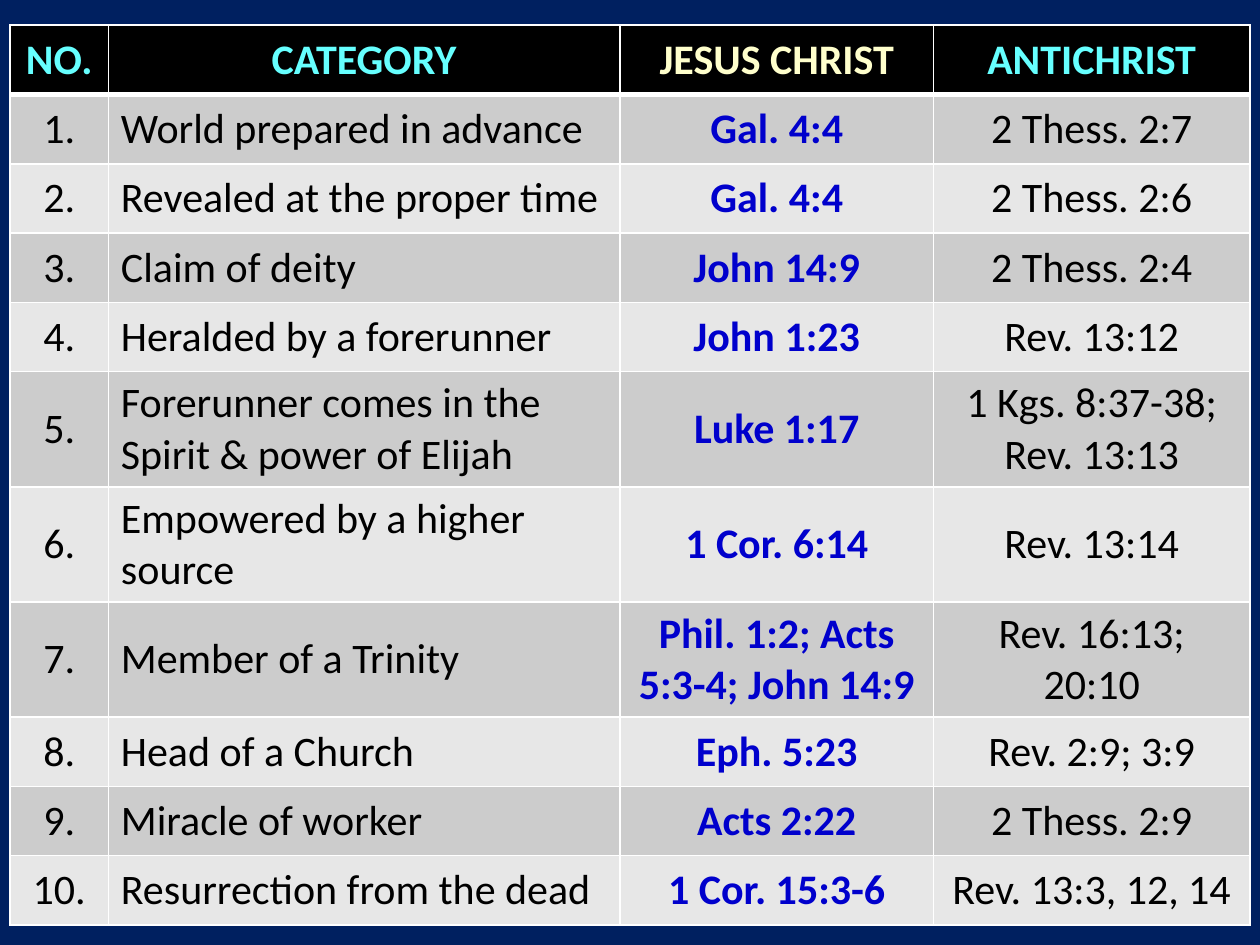
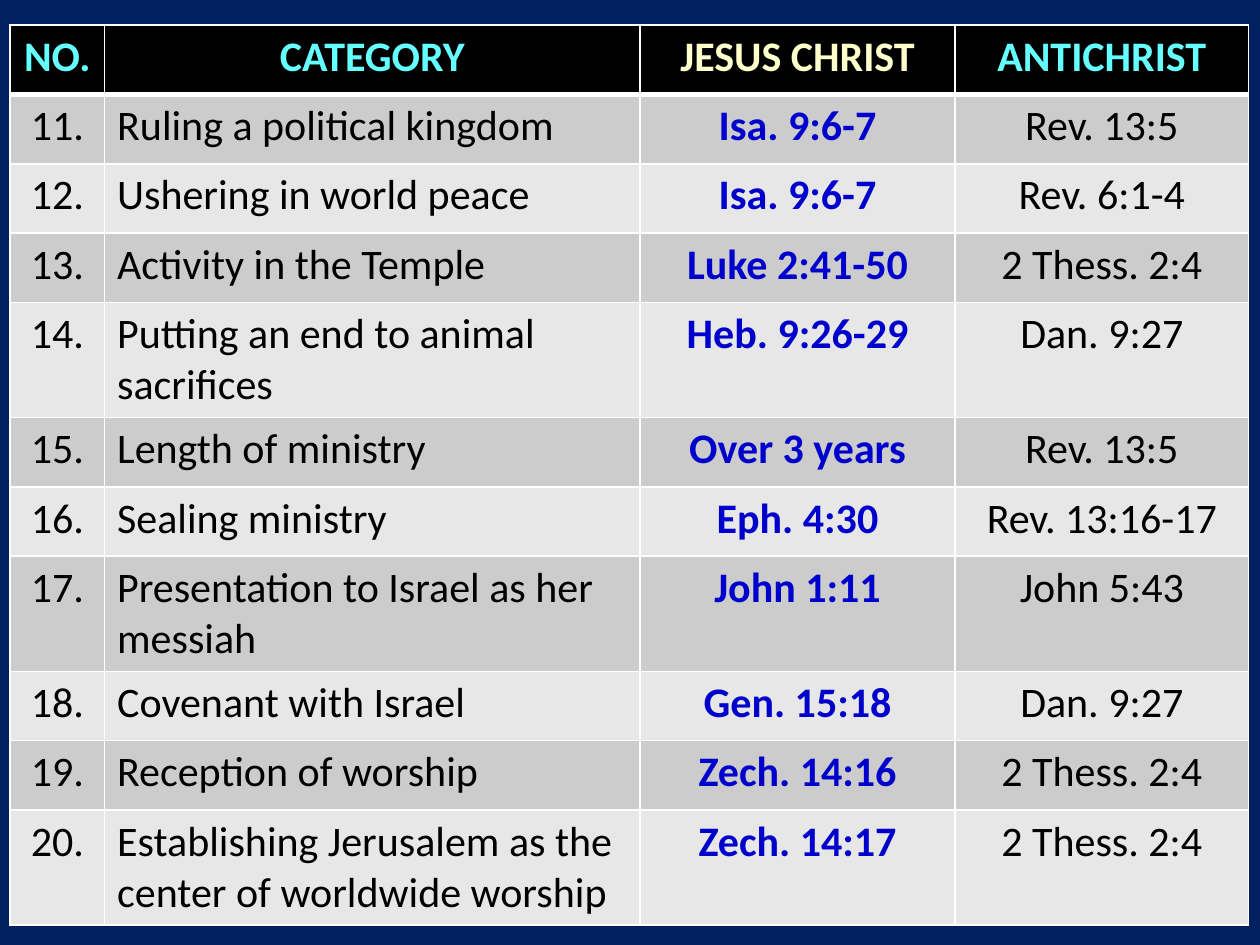
from dataclasses import dataclass

from lxml.etree import SubElement
from pptx import Presentation
from pptx.dml.color import RGBColor
from pptx.enum.text import MSO_ANCHOR as Anchor, PP_ALIGN as Align
from pptx.oxml.ns import qn
from pptx.util import Inches, Pt


@dataclass(frozen=True)
class Theme:
    """Colours, type and line sizes shared by the slides."""
    background: str = "002060"
    header_fill: str = "000000"
    bands: tuple = ("CCCCCC", "E7E7E7")
    header_text: tuple = ("66FFFF", "66FFFF", "FFFFCC", "66FFFF")
    body_text: tuple = ("000000", "000000", "0000CC", "000000")
    border: str = "FFFFFF"
    font: str = "Calibri"
    text_size: int = 24
    thin: int = 1
    thick: int = 3


THEME = Theme()
TABLE_BOX = (0.08, 0.2)
ROW_HEIGHT, TALL_ROW_HEIGHT = 0.55, 0.9
HEADERS = ("NO.", "CATEGORY", "JESUS CHRIST", "ANTICHRIST")
CATEGORY_COLUMN, CHRIST_COLUMN = 1, 2

FIRST_TEN = [
    ("World prepared in advance", "Gal. 4:4", "2 Thess. 2:7"),
    ("Revealed at the proper time", "Gal. 4:4", "2 Thess. 2:6"),
    ("Claim of deity", "John 14:9", "2 Thess. 2:4"),
    ("Heralded by a forerunner", "John 1:23", "Rev. 13:12"),
    ("Forerunner comes in the Spirit & power of Elijah", "Luke 1:17",
     "1 Kgs. 8:37-38; Rev. 13:13"),
    ("Empowered by a higher source", "1 Cor. 6:14", "Rev. 13:14"),
    ("Member of a Trinity", "Phil. 1:2; Acts 5:3-4; John 14:9",
     "Rev. 16:13; 20:10"),
    ("Head of a Church", "Eph. 5:23", "Rev. 2:9; 3:9"),
    ("Miracle of worker", "Acts 2:22", "2 Thess. 2:9"),
    ("Resurrection from the dead", "1 Cor. 15:3-6", "Rev. 13:3, 12, 14"),
]
SECOND_TEN = [
    ("Ruling a political kingdom", "Isa. 9:6-7", "Rev. 13:5"),
    ("Ushering in world peace", "Isa. 9:6-7", "Rev. 6:1-4"),
    ("Activity in the Temple", "Luke 2:41-50", "2 Thess. 2:4"),
    ("Putting an end to animal sacrifices", "Heb. 9:26-29", "Dan. 9:27"),
    ("Length of ministry", "Over 3 years", "Rev. 13:5"),
    ("Sealing ministry", "Eph. 4:30", "Rev. 13:16-17"),
    ("Presentation to Israel as her messiah", "John 1:11", "John 5:43"),
    ("Covenant with Israel", "Gen. 15:18", "Dan. 9:27"),
    ("Reception of worship", "Zech. 14:16", "2 Thess. 2:4"),
    ("Establishing Jerusalem as the center of worldwide worship",
     "Zech. 14:17", "2 Thess. 2:4"),
]


def set_borders(cell, top, bottom):
    """Draw the four cell borders, with the given top and bottom widths."""
    properties = cell._tc.get_or_add_tcPr()
    widths = {"lnL": THEME.thin, "lnR": THEME.thin, "lnT": top, "lnB": bottom}
    for side, width in widths.items():
        line = SubElement(properties, qn(f"a:{side}"), w=str(Pt(width)))
        fill = SubElement(line, qn("a:solidFill"))
        SubElement(fill, qn("a:srgbClr"), val=THEME.border)


def style_cell(cell, text, row, column, anchor):
    """Write and format one cell according to its row and column."""
    is_header = row == 0
    set_borders(cell, THEME.thick if row == 1 else THEME.thin,
                THEME.thick if is_header else THEME.thin)
    cell.fill.solid()
    cell.fill.fore_color.rgb = RGBColor.from_string(
        THEME.header_fill if is_header else THEME.bands[(row - 1) % 2])
    cell.vertical_anchor = anchor
    paragraph = cell.text_frame.paragraphs[0]
    is_left = column == CATEGORY_COLUMN and not is_header
    paragraph.alignment = Align.LEFT if is_left else Align.CENTER
    run = paragraph.add_run()
    run.text = text
    run.font.name = THEME.font
    run.font.size = Pt(THEME.text_size)
    run.font.bold = is_header or column == CHRIST_COLUMN
    colours = THEME.header_text if is_header else THEME.body_text
    run.font.color.rgb = RGBColor.from_string(colours[column])


def add_comparison_table(slide, box, entries, first_number, widths, tall_numbers, anchor):
    """Add the numbered comparison table at the left and top of the box."""
    numbers = range(first_number, first_number + len(entries))
    rows = [HEADERS] + [(f"{number}.", *entry) for number, entry in zip(numbers, entries)]
    heights = [ROW_HEIGHT] + [
        TALL_ROW_HEIGHT if number in tall_numbers else ROW_HEIGHT for number in numbers]
    left, top = box
    table = slide.shapes.add_table(
        len(rows), len(HEADERS), Inches(left), Inches(top),
        Inches(sum(widths)), Inches(sum(heights))).table
    table.horz_banding = False
    for column, width in zip(table.columns, widths):
        column.width = Inches(width)
    for row, height in zip(table.rows, heights):
        row.height = Inches(height)
    for row, texts in enumerate(rows):
        for column, text in enumerate(texts):
            style_cell(table.cell(row, column), text, row, column, anchor)


def add_comparison_slide(presentation, **table_options):
    """Add a navy slide holding one comparison table."""
    slide = presentation.slides.add_slide(presentation.slide_layouts[6])
    background = slide.background.fill
    background.solid()
    background.fore_color.rgb = RGBColor.from_string(THEME.background)
    add_comparison_table(slide, TABLE_BOX, **table_options)


def main():
    """Build and save the presentation."""
    presentation = Presentation()
    presentation.slide_width = Inches(10)
    presentation.slide_height = Inches(7.5)
    add_comparison_slide(
        presentation, entries=FIRST_TEN, first_number=1,
        widths=(0.78, 4.06, 2.49, 2.51), tall_numbers={5, 6, 7}, anchor=Anchor.MIDDLE)
    add_comparison_slide(
        presentation, entries=SECOND_TEN, first_number=11,
        widths=(0.75, 4.25, 2.5, 2.33), tall_numbers={14, 17, 20}, anchor=Anchor.TOP)
    presentation.save("out.pptx")


if __name__ == "__main__":
    main()
